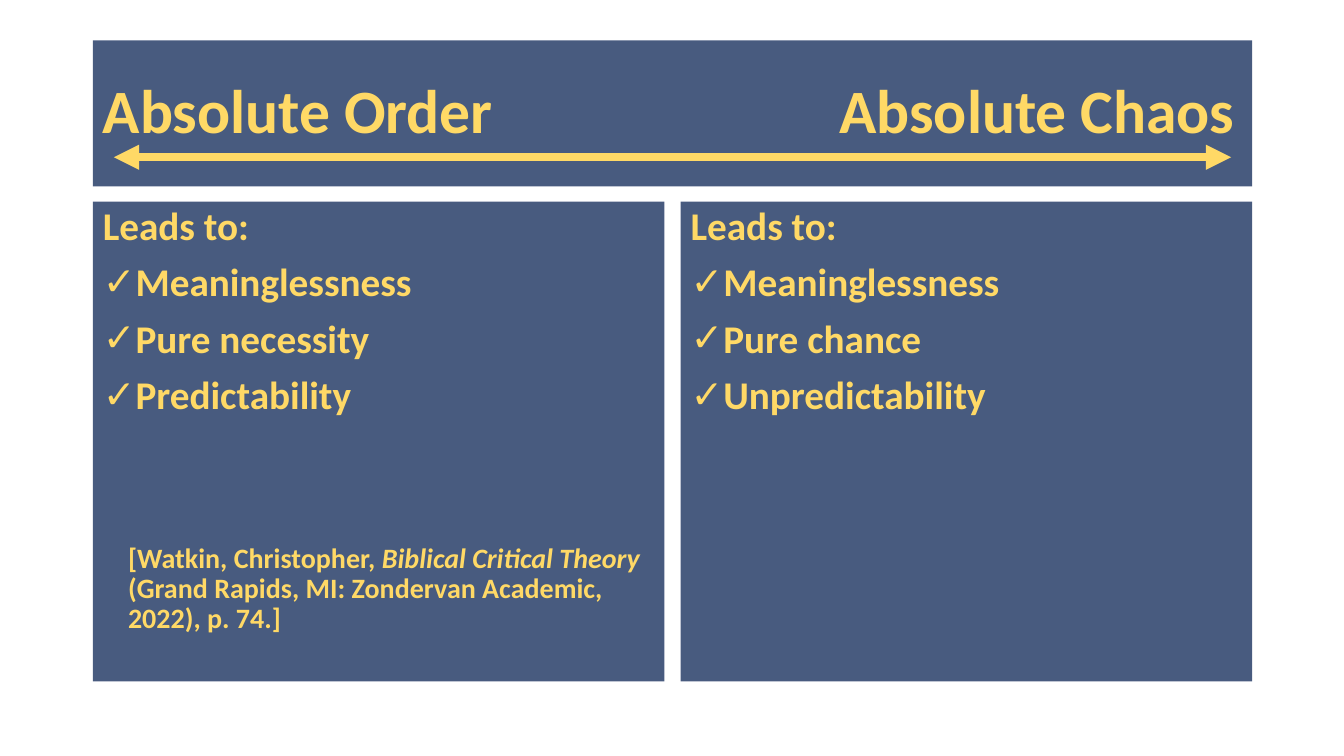
from dataclasses import dataclass

from lxml.etree import SubElement
from pptx import Presentation
from pptx.dml.color import RGBColor
from pptx.enum.shapes import MSO_CONNECTOR as Connector
from pptx.enum.text import MSO_ANCHOR as Anchor, MSO_AUTO_SIZE as AutoSize, PP_ALIGN as Align
from pptx.oxml.ns import qn
from pptx.util import Inches, Pt


@dataclass(frozen=True)
class Theme:
    font: str = "Calibri"
    panel: RGBColor = RGBColor(0x20, 0x38, 0x64)
    accent: RGBColor = RGBColor(0xFF, 0xD9, 0x66)
    opacity: int = 82000
    title_size: int = 44
    list_size: int = 28
    citation_size: int = 20
    left: float = 0.92
    column: float = 5.67
    gutter: float = 0.16
    rows: tuple = ((0.4, 1.45), (2, 4.76))


class ContrastPage:
    """Places styled panels and arrows on a grid of two columns and two rows."""

    def __init__(self, deck, theme):
        self.theme = theme
        self.page = deck.slides.add_slide(deck.slide_layouts[3])

    def panel(self, index, row, column=0, span=1, anchor=Anchor.TOP):
        theme = self.theme
        box = self.page.placeholders[index]
        top, height = theme.rows[row]
        box.left = Inches(theme.left + column * (theme.column + theme.gutter))
        box.top, box.height = Inches(top), Inches(height)
        box.width = Inches(span * theme.column + (span - 1) * theme.gutter)
        box.fill.solid()
        box.fill.fore_color.rgb = theme.panel
        color = box.fill._xPr.find(f"{qn('a:solidFill')}/{qn('a:srgbClr')}")
        SubElement(color, qn("a:alpha"), val=str(theme.opacity))
        frame = box.text_frame
        frame.word_wrap = True
        frame.auto_size = AutoSize.NONE
        frame.vertical_anchor = anchor
        return frame

    def style(self, para, size, before=0):
        para.alignment = Align.LEFT
        para.line_spacing = 0.9
        para.space_before = Pt(before)
        para.font.name = self.theme.font
        para.font.size = Pt(size)
        para.font.bold = True
        para.font.color.rgb = self.theme.accent

    def indent(self, para, left=0, hanging=0, bullet=None):
        properties = para._p.get_or_add_pPr()
        properties.set("marL", str(Inches(left)))
        properties.set("indent", str(-Inches(hanging)))
        if bullet:
            SubElement(properties, qn("a:buFont"), typeface="Arial")
            SubElement(properties, qn("a:buChar"), char=bullet)
        else:
            SubElement(properties, qn("a:buNone"))

    def title(self, left, right):
        para = self.panel(0, row=0, span=2, anchor=Anchor.MIDDLE).paragraphs[0]
        para.text = f"{left}\t{right}"
        tabs = SubElement(para._p.get_or_add_pPr(), qn("a:tabLst"))
        SubElement(tabs, qn("a:tab"), pos=str(Inches(11.23)), algn="r")
        self.style(para, self.theme.title_size)

    def outcomes(self, column, items):
        frame = self.panel(column + 1, row=1, column=column)
        heading = frame.paragraphs[0]
        heading.text = "Leads to:"
        self.indent(heading)
        self.style(heading, self.theme.list_size)
        for item in items:
            para = frame.add_paragraph()
            para.text = item
            self.indent(para, 0.25, 0.25, "✓")
            self.style(para, self.theme.list_size, before=10)
        return frame

    def citation(self, frame, author, work, publisher, ending):
        para = frame.add_paragraph()
        self.indent(para, 0.25)
        self.style(para, self.theme.citation_size, before=90)
        para.add_run().text = author
        span = para.add_run()
        span.text = work
        span.font.italic = True
        para.add_run().text = publisher
        para.add_line_break()
        para.add_run().text = ending

    def arrow(self, row, inset, share):
        theme = self.theme
        top, height = theme.rows[row]
        right = theme.left + 2 * theme.column + theme.gutter
        y = Inches(top + share * height)
        arrow = self.page.shapes.add_connector(
            Connector.STRAIGHT, Inches(theme.left + inset), y, Inches(right - inset), y)
        arrow.line.color.rgb = theme.accent
        arrow.line.width = Pt(6)
        line = arrow.line._get_or_add_ln()
        for end in ("a:headEnd", "a:tailEnd"):
            SubElement(line, qn(end), type="triangle")
        SubElement(arrow._element.spPr, qn("a:effectLst"))


def main():
    deck = Presentation()
    deck.slide_width, deck.slide_height = Inches(13.33), Inches(7.5)
    contrast = ContrastPage(deck, Theme())
    contrast.title("Absolute Order", "Absolute Chaos")
    order = contrast.outcomes(0, ["Meaninglessness", "Pure necessity", "Predictability"])
    contrast.citation(order, "[Watkin, Christopher, ", "Biblical Critical Theory ",
                      "(Grand Rapids, MI: Zondervan Academic,", "2022), p. 74.]")
    contrast.outcomes(1, ["Meaninglessness", "Pure chance", "Unpredictability"])
    contrast.arrow(row=0, inset=0.21, share=0.8)
    deck.save("out.pptx")


if __name__ == "__main__":
    main()
